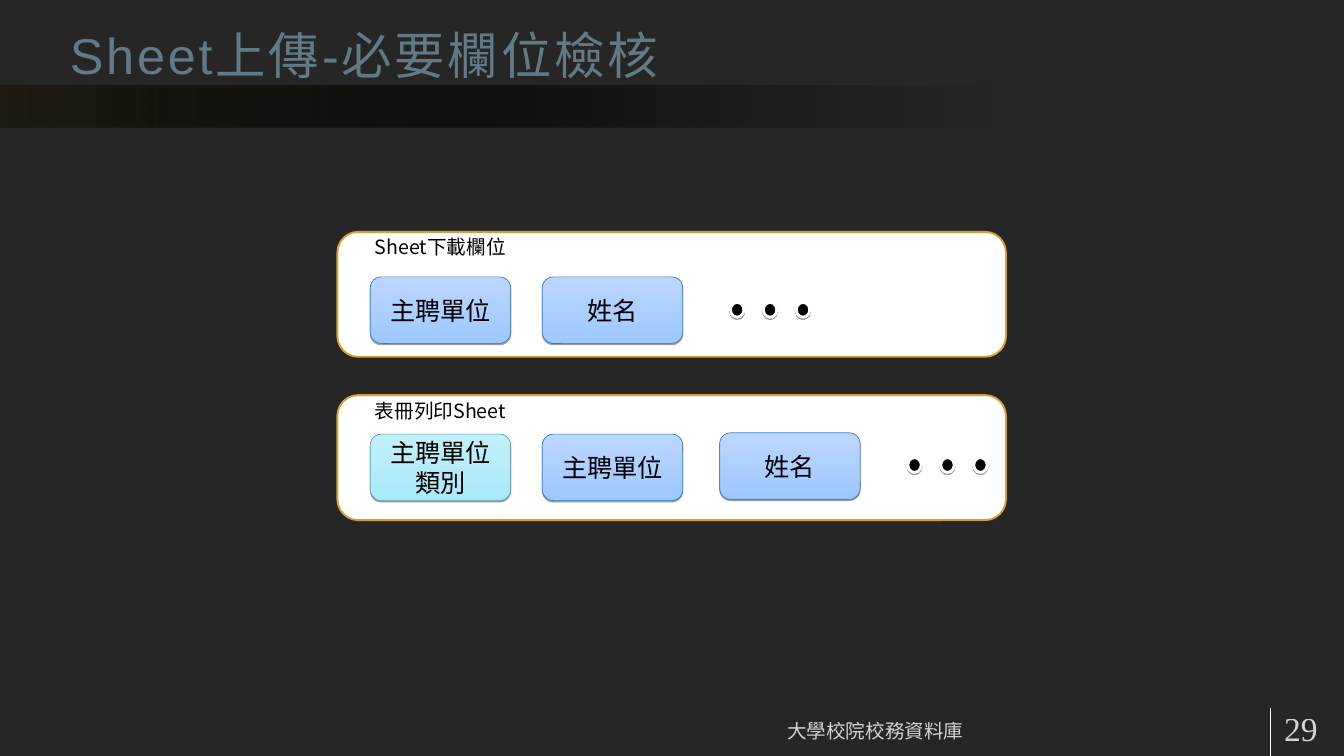
import dataclasses

import lxml.etree
import pptx
import pptx.dml.color
import pptx.enum.shapes
import pptx.enum.text
import pptx.oxml.ns
import pptx.util

Inches = pptx.util.Inches
Pt = pptx.util.Pt
qn = pptx.oxml.ns.qn
SHAPE = pptx.enum.shapes.MSO_SHAPE
ALIGN = pptx.enum.text.PP_ALIGN
ANCHOR = pptx.enum.text.MSO_ANCHOR
AUTO = pptx.enum.text.MSO_AUTO_SIZE


@dataclasses.dataclass(frozen=True)
class Theme:
    """Colours, fonts and type sizes of the slide."""
    bg: str = "262626"
    white: str = "FFFFFF"
    black: str = "000000"
    title: str = "617A86"
    panel_line: str = "D89F39"
    band: tuple = ((0, "1E1C11", 100), (39, "000000", 54), (74, "000000", 0))
    blue: tuple = ("9EC8FF", "BCD7FF", "357EB9")
    cyan: tuple = ("A9E9F9", "C3EFF9", "53A5B3")
    head_font: str = "Arial"
    body_font: str = "Noto Sans CJK SC"
    foot_font: str = "Times New Roman"
    title_pt: int = 54
    number_pt: int = 36
    field_pt: int = 27
    label_pt: int = 21


T = Theme()
WIDE_INSETS = (0.18, 0.09)
SLIM_INSETS = (0.07, 0.04)


def rgb(value):
    """Return a colour from its hex string."""
    return pptx.dml.color.RGBColor.from_string(value)


def add_alpha(clr, percent):
    """Give a colour element an opacity."""
    lxml.etree.SubElement(clr, qn("a:alpha"), val=str(percent * 1000))


def set_gradient(sp, stops, angle):
    """Fill a shape with a linear gradient of (position, colour, opacity) stops."""
    sp.fill.gradient()
    sp.fill.gradient_angle = angle
    gs_lst = sp._element.spPr.find(qn("a:gradFill")).find(qn("a:gsLst"))
    gs_lst.clear()
    for pos, color, opacity in stops:
        gs = lxml.etree.SubElement(gs_lst, qn("a:gs"), pos=str(pos * 1000))
        clr = lxml.etree.SubElement(gs, qn("a:srgbClr"), val=color)
        if opacity < 100:
            add_alpha(clr, opacity)


def add_drop_shadow(sp):
    """Put a short shadow straight below a shape."""
    effects = sp._element.spPr.find(qn("a:effectLst"))
    shadow = lxml.etree.SubElement(effects, qn("a:outerShdw"), blurRad="0",
                                   dist=str(Pt(1.6)), dir="5400000", rotWithShape="0")
    clr = lxml.etree.SubElement(shadow, qn("a:srgbClr"), val=T.black)
    add_alpha(clr, 38)


def add_box(s, kind, box, line=None, width=0.75):
    """Add a preset shape without theme shadow and with the given outline."""
    sp = s.shapes.add_shape(kind, *map(Inches, box))
    sp.shadow.inherit = False
    if line:
        sp.line.color.rgb = rgb(line)
        sp.line.width = Pt(width)
    else:
        sp.line.fill.background()
    return sp


def write(sp, lines, font, size, color, insets, anchor, align=ALIGN.LEFT, opacity=100):
    """Write one paragraph per line and return the runs."""
    tf = sp.text_frame
    tf.word_wrap = True
    tf.auto_size = AUTO.NONE
    tf.vertical_anchor = anchor
    tf.margin_left = tf.margin_right = Inches(insets[0])
    tf.margin_top = tf.margin_bottom = Inches(insets[1])
    runs = []
    for i, line in enumerate(lines):
        p = tf.add_paragraph() if i else tf.paragraphs[0]
        p.alignment = align
        r = p.add_run()
        r.text = line
        r.font.name = font
        r.font.size = Pt(size)
        r.font.color.rgb = rgb(color)
        rPr = r._r.get_or_add_rPr()
        if opacity < 100:
            add_alpha(rPr.find(qn("a:solidFill")).find(qn("a:srgbClr")), opacity)
        ea = lxml.etree.Element(qn("a:ea"), typeface=T.body_font)
        rPr.find(qn("a:latin")).addnext(ea)
        runs.append(r)
    return runs


def add_header(s, box, text):
    """Draw the fading band and set the title above it."""
    x, y, w, h = box
    band = add_box(s, SHAPE.RECTANGLE, (x, y + 1.27, w, h - 1.27))
    set_gradient(band, T.band, 0)
    title = s.shapes.title
    title.left, title.top = Inches(x + 0.86), Inches(y)
    title.width, title.height = Inches(18), Inches(1.35)
    r, = write(title, [text], T.head_font, T.title_pt, T.title, WIDE_INSETS, ANCHOR.BOTTOM)
    r._r.get_or_add_rPr().set("spc", "300")


def add_field(s, box, lines, tones):
    """Draw one shaded field of a panel."""
    bottom, top, line = tones
    sp = add_box(s, SHAPE.ROUNDED_RECTANGLE, box, line)
    set_gradient(sp, ((0, bottom, 100), (100, top, 100)), 90)
    add_drop_shadow(sp)
    write(sp, lines, T.body_font, T.field_pt, T.black, SLIM_INSETS, ANCHOR.MIDDLE, ALIGN.CENTER)


def add_panel(s, box, label, label_dy, fields, dots):
    """Draw a panel with its label, its fields and three dots."""
    x, y, w, h = box
    panel = add_box(s, SHAPE.ROUNDED_RECTANGLE, box, T.panel_line, 2)
    panel.fill.solid()
    panel.fill.fore_color.rgb = rgb(T.white)
    for lines, dx, dy, tones in fields:
        add_field(s, (x + dx, y + dy, 2.09, 0.99), lines, tones)
    dx, dy = dots
    for i in range(3):
        dot = add_box(s, SHAPE.OVAL, (x + dx + 0.49 * i, y + dy, 0.2, 0.22), T.white, 3)
        dot.fill.solid()
        dot.fill.fore_color.rgb = rgb(T.black)
        add_drop_shadow(dot)
    tb = s.shapes.add_textbox(*map(Inches, (x + 0.49, y + label_dy, 2.73, 0.43)))
    write(tb, [label], T.body_font, T.label_pt, T.black, SLIM_INSETS, ANCHOR.TOP)
    tb.text_frame.auto_size = AUTO.SHAPE_TO_FIT_TEXT


def add_footer(s, box, text, number):
    """Place the footer text, the divider and the page number."""
    x, y, w, h = box
    rule_x = x + 18.9
    rule = s.shapes.add_connector(pptx.enum.shapes.MSO_CONNECTOR.STRAIGHT,
                                  Inches(rule_x), Inches(y), Inches(rule_x), Inches(y + h))
    rule.line.color.rgb = rgb(T.white)
    rule.line.width = Pt(0.75)
    lxml.etree.SubElement(rule._element.spPr, qn("a:effectLst"))
    for dx, width, content, size, anchor, align in (
        (7.16, 11.73, text, T.label_pt, ANCHOR.BOTTOM, ALIGN.CENTER),
        (18.93, 1.15, number, T.number_pt, ANCHOR.MIDDLE, ALIGN.LEFT),
    ):
        tb = s.shapes.add_textbox(*map(Inches, (x + dx, y, width, 0.6)))
        write(tb, [content], T.foot_font, size, T.white, WIDE_INSETS, anchor, align, 80)


def main():
    """Build the slide and save it."""
    prs = pptx.Presentation()
    prs.slide_width, prs.slide_height = Inches(20), Inches(11.25)
    s = prs.slides.add_slide(prs.slide_layouts[5])
    s.background.fill.solid()
    s.background.fill.fore_color.rgb = rgb(T.bg)

    add_header(s, (0, 0, 20, 1.9), "Sheet上傳-必要欄位檢核")
    add_panel(s, (5.02, 3.45, 9.95, 1.86), "Sheet下載欄位", 0, (
        (["主聘單位"], 0.49, 0.67, T.blue),
        (["姓名"], 3.05, 0.67, T.blue),
    ), (5.85, 1.05))
    add_panel(s, (5.02, 5.88, 9.95, 1.86), "表冊列印Sheet", 0.02, (
        (["主聘單位", "類別"], 0.49, 0.58, T.cyan),
        (["主聘單位"], 3.05, 0.58, T.blue),
        (["姓名"], 5.69, 0.56, T.blue),
    ), (8.49, 0.93))
    add_footer(s, (0, 10.54, 20, 0.71), "大學校院校務資料庫", "29")
    prs.save("out.pptx")


if __name__ == "__main__":
    main()
